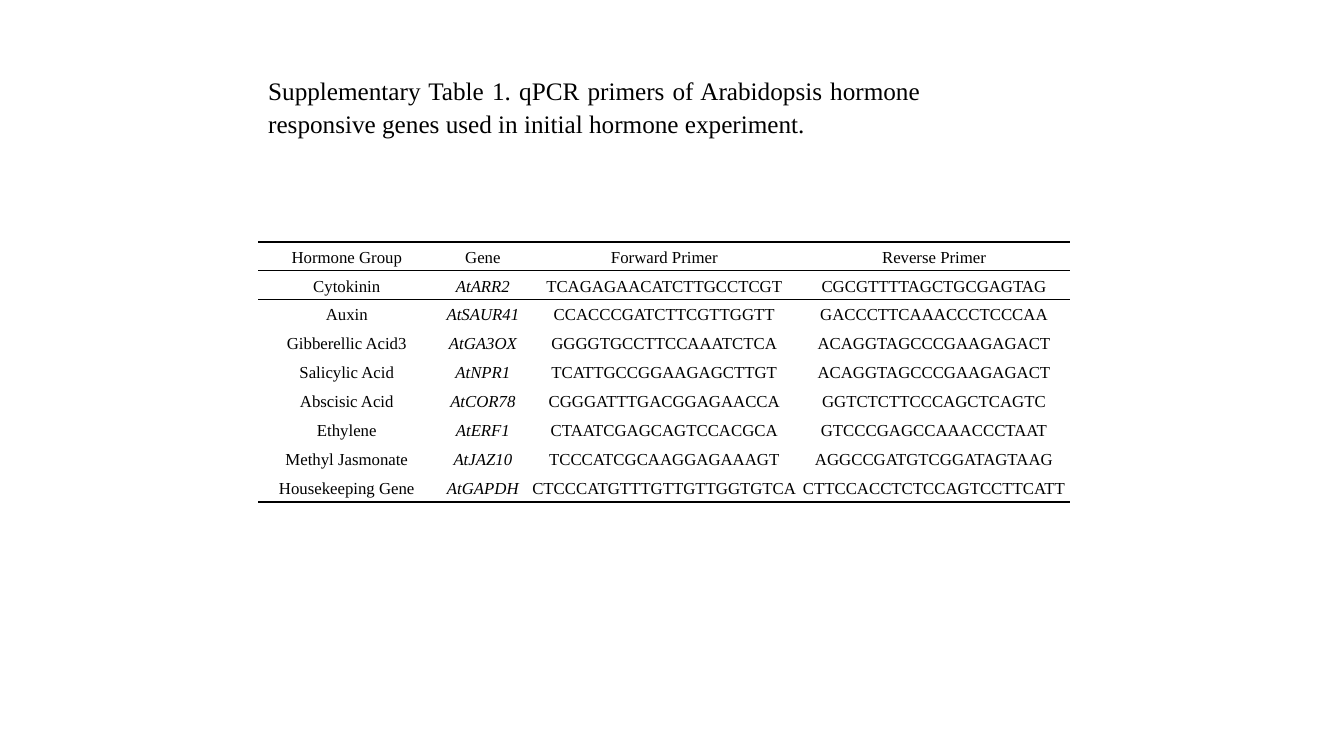
import pptx
import pptx.dml.color
import pptx.enum.text
import pptx.oxml.ns
import pptx.util
from lxml import etree

Inches = pptx.util.Inches
Pt = pptx.util.Pt
FONT = "Times New Roman"
BLACK = "000000"
TITLE = ("Supplementary Table 1. qPCR primers of Arabidopsis hormone "
         "responsive genes used in initial hormone experiment.")
COLUMN_WIDTHS = [1.76, 0.94, 2.66, 2.69]
GENE_COLUMN = 1
ROWS_RULED_BELOW = (0, 1, 8)
PRIMERS = [
    ("Hormone Group", "Gene", "Forward Primer", "Reverse Primer"),
    ("Cytokinin", "AtARR2", "TCAGAGAACATCTTGCCTCGT", "CGCGTTTTAGCTGCGAGTAG"),
    ("Auxin", "AtSAUR41", "CCACCCGATCTTCGTTGGTT", "GACCCTTCAAACCCTCCCAA"),
    ("Gibberellic Acid3", "AtGA3OX", "GGGGTGCCTTCCAAATCTCA", "ACAGGTAGCCCGAAGAGACT"),
    ("Salicylic Acid", "AtNPR1", "TCATTGCCGGAAGAGCTTGT", "ACAGGTAGCCCGAAGAGACT"),
    ("Abscisic Acid", "AtCOR78", "CGGGATTTGACGGAGAACCA", "GGTCTCTTCCCAGCTCAGTC"),
    ("Ethylene", "AtERF1", "CTAATCGAGCAGTCCACGCA", "GTCCCGAGCCAAACCCTAAT"),
    ("Methyl Jasmonate", "AtJAZ10", "TCCCATCGCAAGGAGAAAGT", "AGGCCGATGTCGGATAGTAAG"),
    ("Housekeeping Gene", "AtGAPDH", "CTCCCATGTTTGTTGTTGGTGTCA", "CTTCCACCTCTCCAGTCCTTCATT"),
]
NO_STYLE = "{2D5ABB26-0587-4C30-8999-92F81FD0307C}"


def color(value):
    return pptx.dml.color.RGBColor.from_string(value)


def format_paragraph(para, size, alignment, italic=False):
    para.alignment = alignment
    para.line_spacing = 1.07
    para.font.name = FONT
    para.font.size = Pt(size)
    para.font.italic = italic
    para.font.color.rgb = color(BLACK)


def add_rule(cell, edge):
    qn = pptx.oxml.ns.qn
    line = etree.SubElement(cell._tc.get_or_add_tcPr(), qn(f"a:{edge}"), w=str(Pt(1)))
    fill = etree.SubElement(line, qn("a:solidFill"))
    etree.SubElement(fill, qn("a:srgbClr"), val=BLACK)


def place_title(page, left, top, width, height):
    title = page.shapes.title
    title.left, title.top = Inches(left), Inches(top)
    title.width, title.height = Inches(width), Inches(height)
    frame = title.text_frame
    frame.text = TITLE
    frame.word_wrap = True
    frame.auto_size = pptx.enum.text.MSO_AUTO_SIZE.SHAPE_TO_FIT_TEXT
    frame.vertical_anchor = pptx.enum.text.MSO_ANCHOR.TOP
    para = frame.paragraphs[0]
    format_paragraph(para, 18, pptx.enum.text.PP_ALIGN.JUSTIFY)
    para.space_before = Pt(0)
    para.space_after = Pt(8)


def fill_cell(cell, text, row, column):
    cell.text = text
    cell.vertical_anchor = pptx.enum.text.MSO_ANCHOR.MIDDLE
    cell.margin_left = cell.margin_right = cell.margin_top = Inches(0.01)
    cell.margin_bottom = 0
    italic = row > 0 and column == GENE_COLUMN
    format_paragraph(cell.text_frame.paragraphs[0], 12, pptx.enum.text.PP_ALIGN.CENTER, italic)
    if row == 0:
        add_rule(cell, "lnT")
    if row in ROWS_RULED_BELOW:
        add_rule(cell, "lnB")
    cell.fill.background()


def place_primer_table(page, left, top, width, height):
    frame = page.shapes.add_table(len(PRIMERS), len(COLUMN_WIDTHS), Inches(left),
                                  Inches(top), Inches(width), Inches(height))
    table = frame.table
    table.first_row = False
    table.horz_banding = False
    table._tbl.tblPr.find(pptx.oxml.ns.qn("a:tableStyleId")).text = NO_STYLE
    for column, share in zip(table.columns, COLUMN_WIDTHS):
        column.width = Inches(width * share / sum(COLUMN_WIDTHS))
    for row, texts in enumerate(PRIMERS):
        for column, text in enumerate(texts):
            fill_cell(table.cell(row, column), text, row, column)


def main():
    deck = pptx.Presentation()
    deck.slide_width, deck.slide_height = Inches(13.33), Inches(7.5)
    page = deck.slides.add_slide(deck.slide_layouts.get_by_name("Title Only"))
    place_title(page, 2.56, 0.68, 6.67, 0.73)
    place_primer_table(page, 2.56, 2.4, 8.05, 2.58)
    deck.save("out.pptx")


if __name__ == "__main__":
    main()
